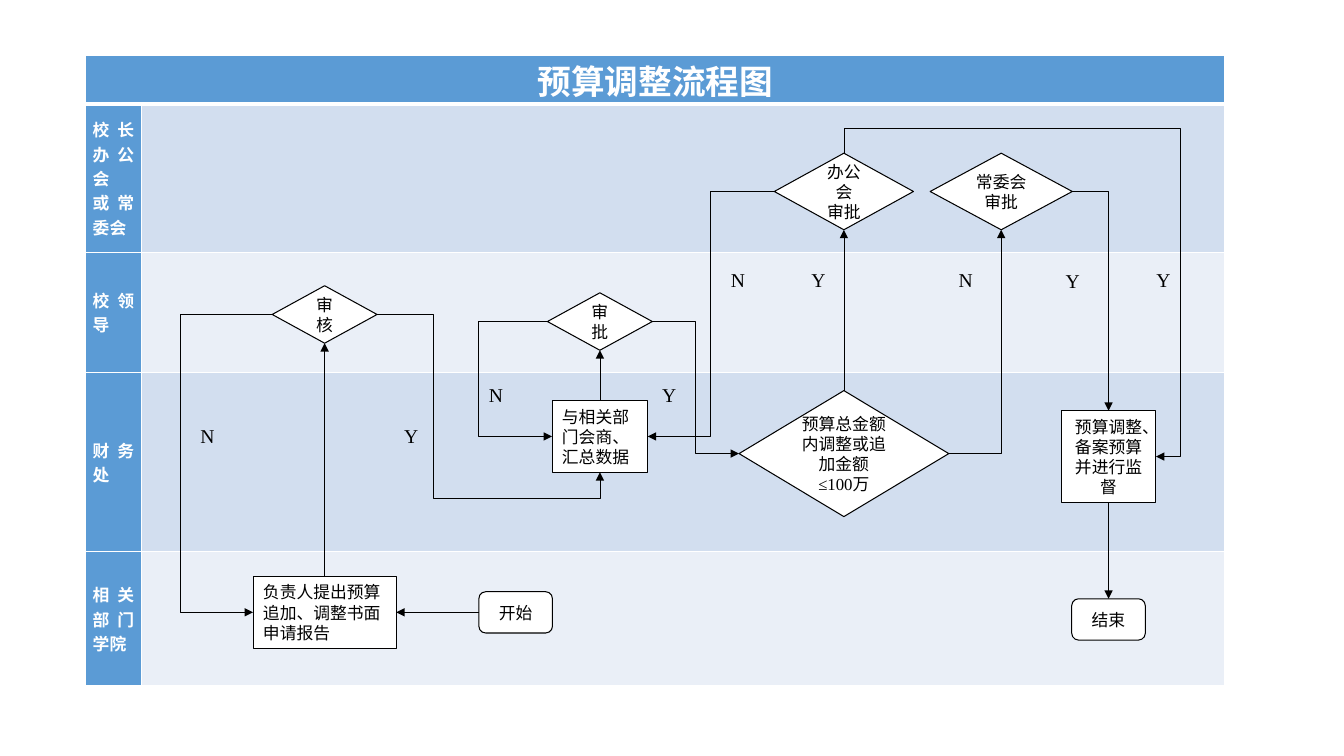
from lxml.etree import SubElement
from pptx import Presentation
from pptx.dml.color import RGBColor
from pptx.enum.shapes import MSO_CONNECTOR as CONNECTOR, MSO_SHAPE as SHAPE
from pptx.enum.text import MSO_ANCHOR as ANCHOR, PP_ALIGN as ALIGN
from pptx.oxml.ns import qn
from pptx.util import Inches, Pt

WHITE = RGBColor(0xFF, 0xFF, 0xFF)
BLACK = RGBColor(0x00, 0x00, 0x00)
HEADER_BLUE = RGBColor(0x5B, 0x9B, 0xD5)
BAND_DARK = RGBColor(0xD2, 0xDE, 0xEF)
BAND_LIGHT = RGBColor(0xEA, 0xEF, 0xF7)

UNIT = Inches(0.1)  # side of one grid square
TOP, LEFT, BOTTOM, RIGHT = range(4)  # connection sites

LANE_COLUMNS = (5.5, 107.5)
TITLE_ROW = 4.7
LANES = [  # label paragraphs, height in grid rows
    (["校长办公会", "或常委会"], 14.7),
    (["校领导"], 11.9),
    (["财务处"], 17.8),
    (["相关部门学院"], 13.3),
]

TERMINAL = SHAPE.FLOWCHART_ALTERNATE_PROCESS
NODES = {  # kind, centre column, centre row, width, height, paragraphs, alignment
    "start": (TERMINAL, 51.15, 60.75, 7.3, 4.1, ["开始"], ALIGN.CENTER),
    "apply": (SHAPE.RECTANGLE, 32.2, 60.75, 14.2, 7.1,
              ["负责人提出预算追加、调整书面申请报告"], ALIGN.LEFT),
    "review": (SHAPE.DIAMOND, 32.2, 31.2, 10.4, 5.7, ["审核"], ALIGN.CENTER),
    "consult": (SHAPE.RECTANGLE, 59.5, 43.3, 9.5, 7.1,
                ["与相关部门会商、汇总数据"], ALIGN.LEFT),
    "approve": (SHAPE.DIAMOND, 59.5, 31.9, 10.4, 5.7, ["审批"], ALIGN.CENTER),
    "amount": (SHAPE.DIAMOND, 83.7, 45, 20.8, 12.5,
               ["预算总金额内调整或追加金额", "≤100万"], ALIGN.CENTER),
    "office": (SHAPE.DIAMOND, 83.7, 19, 13.8, 7.6, ["办公会", "审批"], ALIGN.CENTER),
    "committee": (SHAPE.DIAMOND, 99.3, 19, 14.1, 7.6, ["常委会审批"], ALIGN.CENTER),
    "record": (SHAPE.RECTANGLE, 109.95, 45.3, 9.4, 9.1,
               ["预算调整、备案预算并进行监督"], ALIGN.CENTER),
    "end": (TERMINAL, 109.95, 61.45, 7.3, 4.1, ["结束"], ALIGN.CENTER),
}

STRAIGHT_ARROWS = [  # from, site, to, site, line width
    ("start", LEFT, "apply", RIGHT, 0.75),
    ("apply", TOP, "review", BOTTOM, 0.5),
    ("consult", TOP, "approve", BOTTOM, 0.5),
    ("amount", TOP, "office", BOTTOM, 0.5),
    ("record", BOTTOM, "end", TOP, 0.75),
]
BENT_ARROWS = [  # from, site, to, site, turning column, turning row, arrowhead end
    ("committee", RIGHT, "record", TOP, None, None, "tailEnd"),
    ("amount", RIGHT, "committee", BOTTOM, None, None, "tailEnd"),
    ("approve", RIGHT, "amount", LEFT, 69, None, "tailEnd"),
    ("apply", LEFT, "review", LEFT, 17.9, None, "headEnd"),
    ("consult", LEFT, "approve", LEFT, 47.4, None, "headEnd"),
    ("office", LEFT, "consult", RIGHT, 70.5, None, "tailEnd"),
    ("review", RIGHT, "consult", BOTTOM, 43, 49.4, "tailEnd"),
    ("record", RIGHT, "office", TOP, 117.1, 12.7, "headEnd"),
]

ANSWERS = [  # text, column, row
    ("N", 18.9, 41.6), ("Y", 39.1, 41.6), ("N", 47.5, 37.5), ("Y", 64.7, 37.5),
    ("N", 71.5, 26.1), ("Y", 79.5, 26.1), ("N", 94.1, 26.1), ("Y", 104.7, 26.2),
    ("Y", 113.7, 26.1),
]


def grid(count):
    return round(count * UNIT)


def write(text_frame, paragraphs, size=12, font="Times New Roman", color=BLACK,
          bold=False, align=ALIGN.LEFT):
    """Fill a text frame, one run in each paragraph."""
    for index, text in enumerate(paragraphs):
        paragraph = text_frame.add_paragraph() if index else text_frame.paragraphs[0]
        paragraph.alignment = align
        run = paragraph.add_run()
        run.text = text
        run.font.size, run.font.name, run.font.bold = Pt(size), font, bold
        run.font.color.rgb = color


def style_cell(cell, fill, top=1, bottom=1):
    """Give a cell its white borders, margins and fill."""
    cell.margin_left = cell.margin_right = Inches(0.07)
    cell.margin_top = cell.margin_bottom = 0
    properties = cell._tc.get_or_add_tcPr()
    for side, width in (("L", 1), ("R", 1), ("T", top), ("B", bottom)):
        border = SubElement(properties, qn("a:ln" + side), w=str(Pt(width)))
        border_fill = SubElement(border, qn("a:solidFill"))
        SubElement(border_fill, qn("a:srgbClr"), val=str(WHITE))
    cell.fill.solid()
    cell.fill.fore_color.rgb = fill


def add_lanes(slide):
    heights = [TITLE_ROW] + [height for _, height in LANES]
    frame = slide.shapes.add_table(len(heights), 2, grid(8.5), grid(5.5),
                                   grid(sum(LANE_COLUMNS)), grid(sum(heights)))
    table = frame.table
    table.first_row = table.horz_banding = False
    for column, width in zip(table.columns, LANE_COLUMNS):
        column.width = grid(width)
    for row, height in zip(table.rows, heights):
        row.height = grid(height)

    # Title across both columns
    title = table.cell(0, 0)
    title.merge(table.cell(0, 1))
    for column in range(2):
        style_cell(table.cell(0, column), HEADER_BLUE, bottom=3)
    write(title.text_frame, ["预算调整流程图"], size=24, font="Calibri",
          color=WHITE, bold=True, align=ALIGN.CENTER)

    # One lane for each department
    for row, (label, _) in enumerate(LANES, start=1):
        head, body = table.cell(row, 0), table.cell(row, 1)
        top = 3 if row == 1 else 1
        style_cell(head, HEADER_BLUE, top=top)
        style_cell(body, BAND_DARK if row % 2 else BAND_LIGHT, top=top)
        head.vertical_anchor = ANCHOR.MIDDLE
        head._tc.get_or_add_tcPr().set("vert", "eaVert")
        write(head.text_frame, label, font="Calibri", color=WHITE, bold=True,
              align=ALIGN.JUSTIFY)


def add_node(slide, kind, column, row, width, height, paragraphs, align):
    shape = slide.shapes.add_shape(kind, grid(column - width / 2), grid(row - height / 2),
                                   grid(width), grid(height))
    shape.shadow.inherit = False
    shape.fill.solid()
    shape.fill.fore_color.rgb = WHITE
    shape.line.color.rgb = BLACK
    shape.line.width = Pt(0.75)
    shape.text_frame.word_wrap = True
    shape.text_frame.vertical_anchor = ANCHOR.MIDDLE
    write(shape.text_frame, paragraphs, align=align)
    return shape


def add_arrow(slide, kind, begin, begin_site, end, end_site, width=0.5, head="tailEnd"):
    """Join two nodes; head names the line end that has the arrowhead."""
    connector = slide.shapes.add_connector(kind, 0, 0, 0, 0)
    connector.begin_connect(begin, begin_site)
    connector.end_connect(end, end_site)
    connector.line.color.rgb = BLACK
    connector.line.width = Pt(width)
    SubElement(connector.line._get_or_add_ln(), qn("a:" + head), type="triangle")
    SubElement(connector._element.spPr, qn("a:effectLst"))
    return connector


def bend(connector, column, row):
    """Turn the elbow at a column and a row, where they are given."""
    turns = []
    if column is not None:
        turns.append((grid(column) - connector.begin_x) / (connector.end_x - connector.begin_x))
    if row is not None:
        turns.append((grid(row) - connector.begin_y) / (connector.end_y - connector.begin_y))
    geometry = connector._element.spPr.find(qn("a:prstGeom"))
    geometry.set("prst", f"bentConnector{2 + len(turns)}")
    guides = geometry.find(qn("a:avLst"))
    if guides is None:
        guides = SubElement(geometry, qn("a:avLst"))
    for number, turn in enumerate(turns, start=1):
        SubElement(guides, qn("a:gd"), name=f"adj{number}", fmla=f"val {round(turn * 100000)}")


def add_answer(slide, text, column, row):
    box = slide.shapes.add_textbox(grid(column), grid(row), grid(2.6), grid(3.4))
    box.text_frame.word_wrap = True
    write(box.text_frame, [text], size=14)


def main():
    presentation = Presentation()
    presentation.slide_width, presentation.slide_height = Inches(13.33), Inches(7.5)
    slide = presentation.slides.add_slide(presentation.slide_layouts[6])

    add_lanes(slide)
    nodes = {name: add_node(slide, *node) for name, node in NODES.items()}
    for begin, begin_site, end, end_site, width in STRAIGHT_ARROWS:
        add_arrow(slide, CONNECTOR.STRAIGHT, nodes[begin], begin_site,
                  nodes[end], end_site, width=width)
    for begin, begin_site, end, end_site, column, row, head in BENT_ARROWS:
        connector = add_arrow(slide, CONNECTOR.ELBOW, nodes[begin], begin_site,
                              nodes[end], end_site, head=head)
        bend(connector, column, row)
    for answer in ANSWERS:
        add_answer(slide, *answer)

    presentation.save("out.pptx")


if __name__ == "__main__":
    main()
